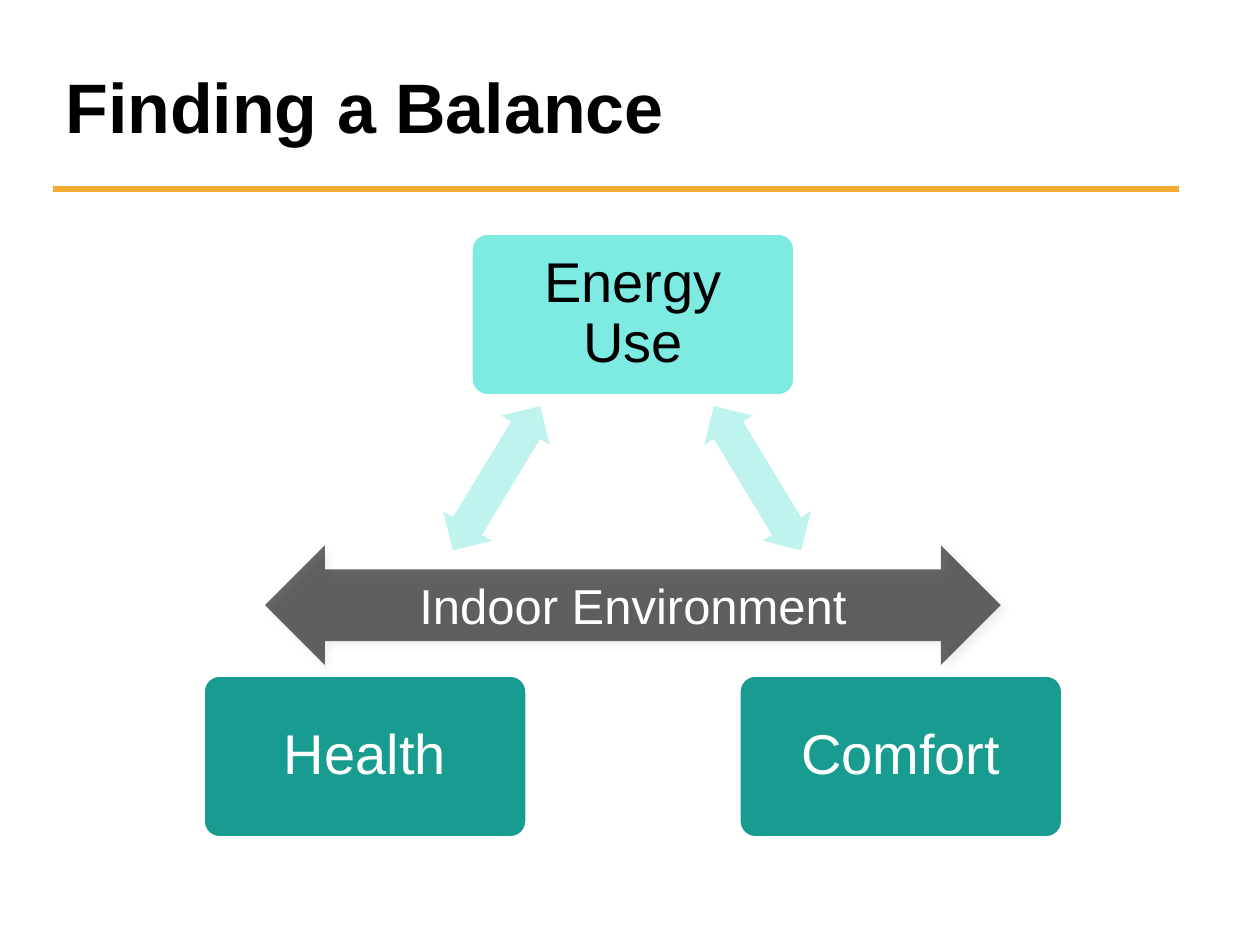
"""Build the slide on balancing energy use, health and comfort."""
from dataclasses import dataclass
from typing import Optional

from lxml.etree import SubElement
from pptx import Presentation
from pptx.dml.color import RGBColor
from pptx.enum.shapes import MSO_CONNECTOR as Connector, MSO_SHAPE as Preset
from pptx.enum.text import MSO_ANCHOR as Anchor, PP_ALIGN as Align
from pptx.oxml.ns import qn
from pptx.util import Cm, Pt

FONT = "Arial"
MIDDLE = 12.76
BOX_OFFSET = 5.4
ARROW_MIDDLE = 12.64
ARROW_OFFSET = 2.63


@dataclass
class Block:
    center_x: float
    center_y: float
    width: float
    height: float
    fill: str
    rotation: float = 0


@dataclass
class Topic:
    label: str
    center_x: float
    center_y: float
    fill: str
    color: str


TOPICS = [
    Topic("Energy Use", MIDDLE, 6.34, "7DEBE1", "000000"),
    Topic("Comfort", MIDDLE + BOX_OFFSET, 15.25, "189C90", "FFFFFF"),
    Topic("Health", MIDDLE - BOX_OFFSET, 15.25, "189C90", "FFFFFF"),
]


def rgb(value: str) -> RGBColor:
    return RGBColor.from_string(value)


def write_text(shape, text: str, *, size: float, color: str, bold: bool = False,
               align: Align = Align.CENTER, spacing: float = 1.0,
               inset: Optional[float] = None) -> None:
    frame = shape.text_frame
    frame.word_wrap = True
    frame.vertical_anchor = Anchor.MIDDLE
    if inset is not None:
        frame.margin_left = frame.margin_right = Cm(inset)
        frame.margin_top = frame.margin_bottom = Cm(inset)
    para = frame.paragraphs[0]
    para.alignment = align
    para.line_spacing = spacing
    span = para.add_run()
    span.text = text
    span.font.name = FONT
    span.font.size = Pt(size)
    span.font.bold = bold
    span.font.color.rgb = rgb(color)


def add_block(page, preset: Preset, block: Block, adjustments: list[float]):
    shape = page.shapes.add_shape(
        preset, Cm(block.center_x - block.width / 2), Cm(block.center_y - block.height / 2),
        Cm(block.width), Cm(block.height))
    shape.shadow.inherit = False
    shape.rotation = block.rotation
    shape.fill.solid()
    shape.fill.fore_color.rgb = rgb(block.fill)
    shape.line.fill.background()
    for index, value in enumerate(adjustments):
        shape.adjustments[index] = value
    return shape


def add_topic(page, topic: Topic) -> None:
    block = Block(topic.center_x, topic.center_y, 6.53, 3.28, topic.fill)
    box = add_block(page, Preset.ROUNDED_RECTANGLE, block, [0.1])
    box.line.color.rgb = rgb("FFFFFF")
    box.line.width = Pt(2)
    write_text(box, topic.label, size=32, color=topic.color, spacing=0.9, inset=0.33)


def add_double_arrow(page, block: Block):
    return add_block(page, Preset.LEFT_RIGHT_ARROW, block, [0.6, 0.5])


def set_opacity(shape, percent: int) -> None:
    color = shape.fill._xPr.find(qn("a:solidFill")).find(qn("a:srgbClr"))
    SubElement(color, qn("a:alpha"), val=str(percent * 1000))


def set_shadow(shape, color: str, percent: int, blur: float, distance: float, angle: int) -> None:
    effects = shape._element.spPr.find(qn("a:effectLst"))
    shadow = SubElement(effects, qn("a:outerShdw"), blurRad=str(Pt(blur)), dist=str(Pt(distance)),
                        dir=str(angle * 60000), algn="tl", rotWithShape="0")
    tint = SubElement(shadow, qn("a:srgbClr"), val=color)
    SubElement(tint, qn("a:alpha"), val=str(percent * 1000))


def add_rule(page, left: float, right: float, top: float) -> None:
    rule = page.shapes.add_connector(Connector.STRAIGHT, Cm(left), Cm(top), Cm(right), Cm(top))
    rule.line.color.rgb = rgb("EFAB31")
    rule.line.width = Pt(4)
    SubElement(rule._element.spPr, qn("a:effectLst"))


def main() -> None:
    deck = Presentation()
    deck.slide_width, deck.slide_height = Cm(25.4), Cm(19.05)
    page = deck.slides.add_slide(deck.slide_layouts[6])

    add_rule(page, 1.07, 23.77, 3.81)
    for topic in TOPICS:
        add_topic(page, topic)
    for side in (1, -1):
        add_double_arrow(page, Block(ARROW_MIDDLE + side * ARROW_OFFSET, 9.64, 3.4, 1.14,
                                     "BFF3EE", side * 58.8))

    title = page.shapes.add_textbox(Cm(1.07), Cm(1.07), Cm(17.98), Cm(2.13))
    write_text(title, "Finding a Balance", size=40, color="000000", bold=True, align=Align.LEFT)

    indoor = add_double_arrow(page, Block(MIDDLE, 12.2, 14.83, 2.41, "000000"))
    set_opacity(indoor, 60)
    set_shadow(indoor, "000000", 10, 4, 3, 45)
    write_text(indoor, "Indoor Environment", size=28, color="FFFFFF")

    deck.save("out.pptx")


if __name__ == "__main__":
    main()
